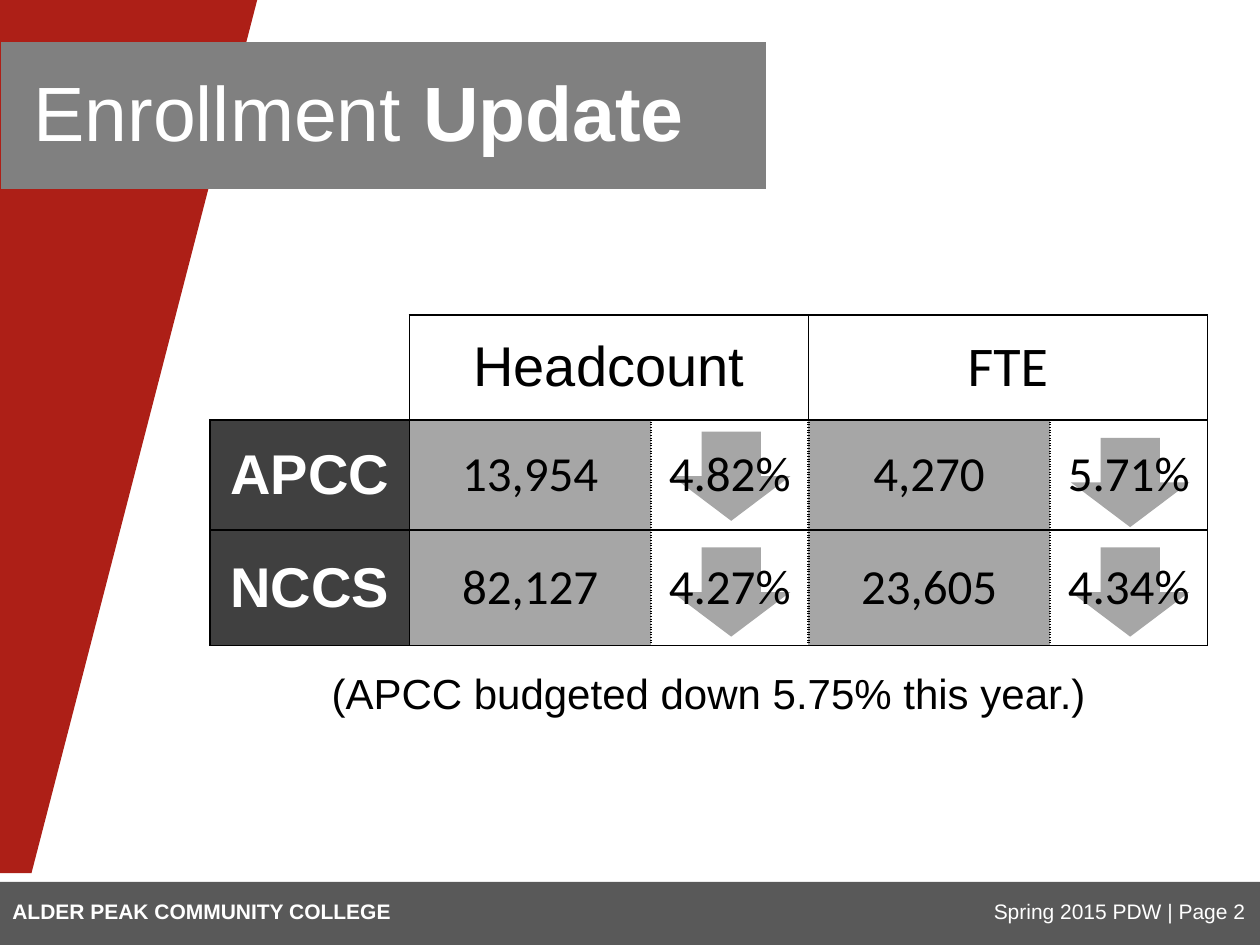
import lxml.etree
import pptx
import pptx.dml.color
import pptx.enum.shapes
import pptx.enum.text
import pptx.oxml.ns
import pptx.util

Pt = pptx.util.Pt
SHAPE = pptx.enum.shapes.MSO_SHAPE
ALIGN = pptx.enum.text.PP_ALIGN
ANCHOR = pptx.enum.text.MSO_ANCHOR
qn = pptx.oxml.ns.qn

COLOURS = {
    "red": "AD1F17",
    "banner": "808080",
    "footer": "595959",
    "label": "404040",
    "figure": "A6A6A6",
    "black": "000000",
    "white": "FFFFFF",
}


def rgb(name):
    return pptx.dml.color.RGBColor.from_string(COLOURS[name])


def add_text(paragraph, text, size=24, font="Arial", colour="black", bold=False,
             align=ALIGN.LEFT):
    paragraph.alignment = align
    run = paragraph.add_run()
    run.text = text
    run.font.size = Pt(size)
    run.font.name = font
    run.font.bold = bold
    run.font.color.rgb = rgb(colour)


class SlideBuilder:
    def __init__(self, deck):
        self.slide = deck.slides.add_slide(deck.slide_layouts[6])
        self.shapes = self.slide.shapes

    def paint(self, shape, colour):
        shape.shadow.inherit = False
        shape.fill.solid()
        shape.fill.fore_color.rgb = rgb(colour)
        shape.line.fill.background()

    def block(self, preset, box, colour):
        self.paint(self.shapes.add_shape(preset, *map(Pt, box)), colour)

    def outline(self, points, colour):
        builder = self.shapes.build_freeform(*points[0], scale=Pt(1))
        builder.add_line_segments(points[1:], close=True)
        self.paint(builder.convert_to_shape(), colour)

    def text(self, box, *runs, anchor=ANCHOR.TOP, **style):
        frame = self.shapes.add_textbox(*map(Pt, box)).text_frame
        frame.word_wrap = True
        frame.vertical_anchor = anchor
        for text, bold in runs:
            add_text(frame.paragraphs[0], text, bold=bold, **style)

    def table(self, box, widths, heights):
        table = self.shapes.add_table(len(heights), len(widths), *map(Pt, box)).table
        table.first_row = table.horz_banding = False
        for column, width in zip(table.columns, widths):
            column.width = Pt(width)
        for row, height in zip(table.rows, heights):
            row.height = Pt(height)
        return table

    def cell(self, cell, text, fill=None, **style):
        cell.vertical_anchor = ANCHOR.MIDDLE
        if fill:
            cell.fill.solid()
            cell.fill.fore_color.rgb = rgb(fill)
        else:
            cell.fill.background()
        if text:
            add_text(cell.text_frame.paragraphs[0], text, align=ALIGN.CENTER, **style)

    def borders(self, cell, hidden=(), dotted=()):
        properties = cell._tc.get_or_add_tcPr()
        for index, side in enumerate("LRTB"):
            width = 1.5 if side in dotted else 1
            line = lxml.etree.Element(qn(f"a:ln{side}"), w=str(Pt(width)))
            if side in hidden:
                lxml.etree.SubElement(line, qn("a:noFill"))
            else:
                fill = lxml.etree.SubElement(line, qn("a:solidFill"))
                lxml.etree.SubElement(fill, qn("a:srgbClr"), val=COLOURS["black"])
                dash = "sysDot" if side in dotted else "solid"
                lxml.etree.SubElement(line, qn("a:prstDash"), val=dash)
            properties.insert(index, line)


def add_enrollment(builder):
    table = builder.table((120, 180, 570, 189), (114, 138, 90, 138, 90), (60, 63, 66))
    header = ("", "Headcount", "", "FTE", "")
    for column, heading in enumerate(header):
        cell = table.cell(0, column)
        font = "Calibri" if heading == "FTE" else "Arial"
        builder.cell(cell, heading, size=32, font=font)
        builder.borders(cell, hidden="LT" if column == 0 else "")
    for column in (1, 3):
        table.cell(0, column).merge(table.cell(0, column + 1))

    colleges = (
        ("APCC", "13,954", "4.82%", "4,270", "5.71%"),
        ("NCCS", "82,127", "4.27%", "23,605", "4.34%"),
    )
    for row, values in enumerate(colleges, 1):
        for column, value in enumerate(values):
            cell = table.cell(row, column)
            if column == 0:
                builder.cell(cell, value, "label", size=32, colour="white", bold=True)
            else:
                fill = "figure" if column % 2 else None
                builder.cell(cell, value, fill, size=28, font="Calibri")
            dotted = ("L" if column > 1 else "") + ("R" if 0 < column < 4 else "")
            builder.borders(cell, dotted=dotted)


def main():
    deck = pptx.Presentation()
    deck.slide_width, deck.slide_height = Pt(720), Pt(540)
    builder = SlideBuilder(deck)

    for left, top in ((384, 246.6), (384, 312.8), (612, 250.2), (612, 312.8)):
        builder.block(SHAPE.DOWN_ARROW, (left, top, 67.7, 51), "figure")
    builder.text((120, 378, 570, 42), ("(APCC budgeted down 5.75% this year.)", False),
                 align=ALIGN.CENTER)

    builder.outline([(0, 0), (147, 0), (18, 499), (0, 499)], "red")
    builder.block(SHAPE.RECTANGLE, (0, 504, 720, 36), "footer")
    builder.text((402, 510, 316.8, 21.6), ("Spring 2015 PDW | Page 2", False),
                 size=12, colour="white", align=ALIGN.RIGHT)
    builder.text((0, 510, 316.8, 21.6), ("ALDER PEAK COMMUNITY COLLEGE", True),
                 size=12, colour="white")
    builder.block(SHAPE.RECTANGLE, (0.7, 24, 437, 84), "banner")
    builder.text((12, 18, 648, 90), ("Enrollment", False), (" Update", True),
                 size=44, colour="white", anchor=ANCHOR.MIDDLE)
    add_enrollment(builder)
    deck.save("out.pptx")


if __name__ == "__main__":
    main()
